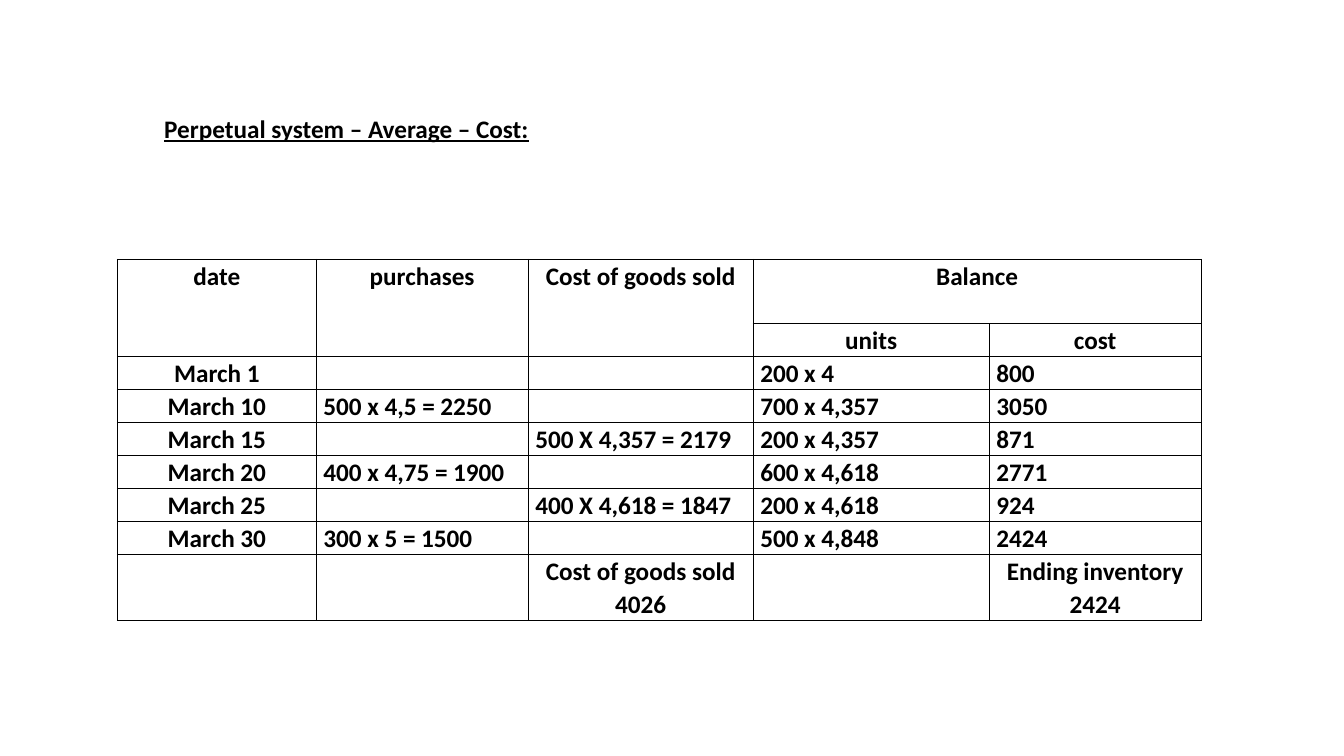
from lxml import etree
from pptx import Presentation
from pptx.dml.color import RGBColor
from pptx.enum.text import MSO_ANCHOR, MSO_AUTO_SIZE, PP_ALIGN
from pptx.oxml import parse_xml
from pptx.oxml.ns import nsdecls
from pptx.util import Cm, Pt

BLACK = RGBColor(0x00, 0x00, 0x00)
LEFT, CENTER = PP_ALIGN.LEFT, PP_ALIGN.CENTER
TOP = MSO_ANCHOR.TOP
GROW = MSO_AUTO_SIZE.SHAPE_TO_FIT_TEXT

COLUMN_WIDTHS = [5.01, 5.34, 5.67, 5.95, 5.34]
LINE_HEIGHT = 0.81
HEADER_ROWS = 2
LEDGER = [
    ["date", "purchases", "Cost of goods sold", "Balance", ""],
    ["", "", "", "units", "cost"],
    ["March 1", "", "", "200 x 4", "800"],
    ["March 10", "500 x 4,5 = 2250", "", "700 x 4,357", "3050"],
    ["March 15", "", "500 X 4,357 = 2179", "200 x 4,357", "871"],
    ["March 20", "400 x 4,75 = 1900", "", "600 x 4,618", "2771"],
    ["March 25", "", "400 X 4,618 = 1847", "200 x 4,618", "924"],
    ["March 30", "300 x 5 = 1500", "", "500 x 4,848", "2424"],
    ["", "", "Cost of goods sold\n4026", "", "Ending inventory\n2424"],
]


class LedgerPage:
    """Draws the heading and the inventory ledger in one text style."""

    font_name = "Calibri"
    font_size = Pt(18)
    line_spacing = 1.07

    def __init__(self, page):
        self.page = page

    def style(self, para, align=LEFT, underline=False):
        para.alignment = align
        para.line_spacing = self.line_spacing
        para.font.size = self.font_size
        for span in para.runs:
            span.font.name = self.font_name
            span.font.size = self.font_size
            span.font.bold = True
            span.font.underline = underline
            span.font.color.rgb = BLACK

    def heading(self, text, left, top, width, height):
        box = self.page.shapes.add_textbox(Cm(left), Cm(top), Cm(width), Cm(height))
        box.text_frame.word_wrap = True
        box.text_frame.auto_size = GROW
        box.text_frame.text = text
        para = box.text_frame.paragraphs[0]
        self.style(para, underline=True)
        para.space_after = Pt(8)

    def borders(self, cell):
        properties = cell._tc.get_or_add_tcPr()
        for side in "LRTB":
            line = parse_xml(f'<a:ln{side} {nsdecls("a")} w="{Pt(1)}"><a:solidFill/></a:ln{side}>')
            etree.SubElement(line[0], line[0].tag.replace("solidFill", "srgbClr"), val=str(BLACK))
            properties.append(line)

    def fill_cell(self, cell, text, align):
        cell.margin_left = cell.margin_right = Cm(0.18)
        cell.margin_top = cell.margin_bottom = 0
        cell.vertical_anchor = TOP
        self.borders(cell)
        cell.fill.background()
        cell.text_frame.text = text
        for para in cell.text_frame.paragraphs:
            self.style(para, align)

    def table(self, rows, widths, left, top):
        last = len(rows) - 1
        heights = [LINE_HEIGHT * (2 if index in (0, last) else 1) for index in range(len(rows))]
        frame = self.page.shapes.add_table(
            len(rows), len(widths), Cm(left), Cm(top), Cm(sum(widths)), Cm(sum(heights)))
        grid = frame.table
        grid.first_row = grid.horz_banding = False
        for column, width in zip(grid.columns, widths):
            column.width = Cm(width)
        for row, height in zip(grid.rows, heights):
            row.height = Cm(height)
        for row_index, texts in enumerate(rows):
            for column_index, text in enumerate(texts):
                centered = row_index < HEADER_ROWS or row_index == last or column_index == 0
                self.fill_cell(grid.cell(row_index, column_index), text, CENTER if centered else LEFT)
        for column_index in range(3):
            grid.cell(0, column_index).merge(grid.cell(1, column_index))
        grid.cell(0, 3).merge(grid.cell(0, 4))


def main():
    deck = Presentation()
    deck.slide_width, deck.slide_height = Cm(33.87), Cm(19.05)
    ledger_page = LedgerPage(deck.slides.add_slide(deck.slide_layouts[6]))
    ledger_page.table(LEDGER, COLUMN_WIDTHS, 2.96, 6.54)
    ledger_page.heading("Perpetual system – Average – Cost:", 3.89, 2.67, 21.46, 1.09)
    deck.save("out.pptx")


if __name__ == "__main__":
    main()
